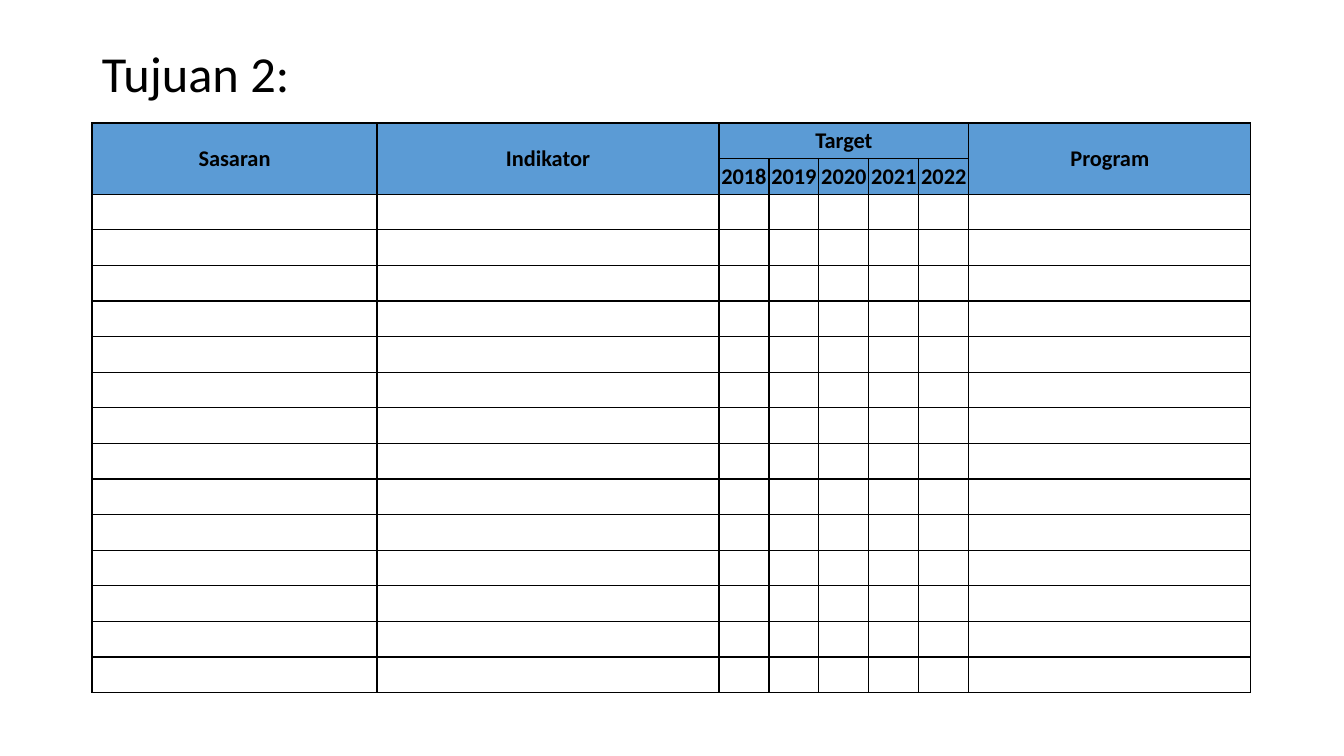
from lxml.etree import SubElement
from pptx import Presentation
from pptx.dml.color import RGBColor
from pptx.enum.text import MSO_ANCHOR, PP_ALIGN
from pptx.oxml.ns import qn
from pptx.util import Pt

PX = 9071  # EMU per px, 100.8 px to the inch
COLORS = {"text": "000000", "border": "000000", "head": "5B9BD5", "body": "FFFFFF"}
FONTS = {
    "title": {"name": "Calibri", "size": Pt(36), "bold": False},
    "cell": {"name": "Calibri", "size": Pt(16), "bold": True},
}
CELL_FORMAT = {
    "margin_left": PX, "margin_right": PX, "margin_top": PX, "margin_bottom": 0,
    "vertical_anchor": MSO_ANCHOR.MIDDLE,
}
COL_WIDTHS = [285, 342] + [50] * 5 + [282]
ROWS, HEAD_ROWS, TABLE_HEIGHT = 16, 2, 570
YEAR_COL, YEARS = 2, range(2018, 2023)


def set_text(p, text, style):
    p.text = text
    for name, value in FONTS[style].items():
        setattr(p.font, name, value)
        for r in p.runs:
            setattr(r.font, name, value)
    for r in p.runs:
        r.font.color.rgb = RGBColor.from_string(COLORS["text"])


def set_borders(cell):
    tcPr = cell._tc.get_or_add_tcPr()
    for i, side in enumerate(("lnL", "lnR", "lnT", "lnB")):
        ln = tcPr.makeelement(qn(f"a:{side}"), {"w": str(Pt(1))})
        fill = SubElement(ln, qn("a:solidFill"))
        SubElement(fill, qn("a:srgbClr"), val=COLORS["border"])
        tcPr.insert(i, ln)  # borders come before the fill


prs = Presentation()
prs.slide_width, prs.slide_height = 1344 * PX, 756 * PX
s = prs.slides.add_slide(prs.slide_layouts[6])

# Title
tf = s.shapes.add_textbox(92 * PX, 40 * PX, 1159 * PX, 72 * PX).text_frame
tf.word_wrap = True
tf.vertical_anchor = MSO_ANCHOR.MIDDLE
tf.paragraphs[0].line_spacing = 0.9
set_text(tf.paragraphs[0], "Tujuan 2:", "title")

# Table grid
table = s.shapes.add_table(ROWS, len(COL_WIDTHS), 92 * PX, 123 * PX,
                           sum(COL_WIDTHS) * PX, TABLE_HEIGHT * PX).table
table.first_row = table.horz_banding = False
for col, width in zip(table.columns, COL_WIDTHS):
    col.width = width * PX
for row in table.rows:
    row.height = TABLE_HEIGHT * PX // ROWS

# Header labels by row and column
labels = {(0, 0): "Sasaran", (0, 1): "Indikator", (0, YEAR_COL): "Target", (0, 7): "Program"}
labels.update({(1, YEAR_COL + i): str(year) for i, year in enumerate(YEARS)})

# Cells
for i in range(ROWS):
    for j in range(len(COL_WIDTHS)):
        cell = table.cell(i, j)
        for name, value in CELL_FORMAT.items():
            setattr(cell, name, value)
        cell.fill.solid()
        part = "head" if i < HEAD_ROWS else "body"
        cell.fill.fore_color.rgb = RGBColor.from_string(COLORS[part])
        set_borders(cell)
        p = cell.text_frame.paragraphs[0]
        p.alignment = PP_ALIGN.CENTER
        set_text(p, labels.get((i, j), ""), "cell")

# Merged headers
for j in (0, 1, 7):
    table.cell(0, j).merge(table.cell(1, j))
table.cell(0, YEAR_COL).merge(table.cell(0, YEAR_COL + len(YEARS) - 1))

prs.save("out.pptx")
